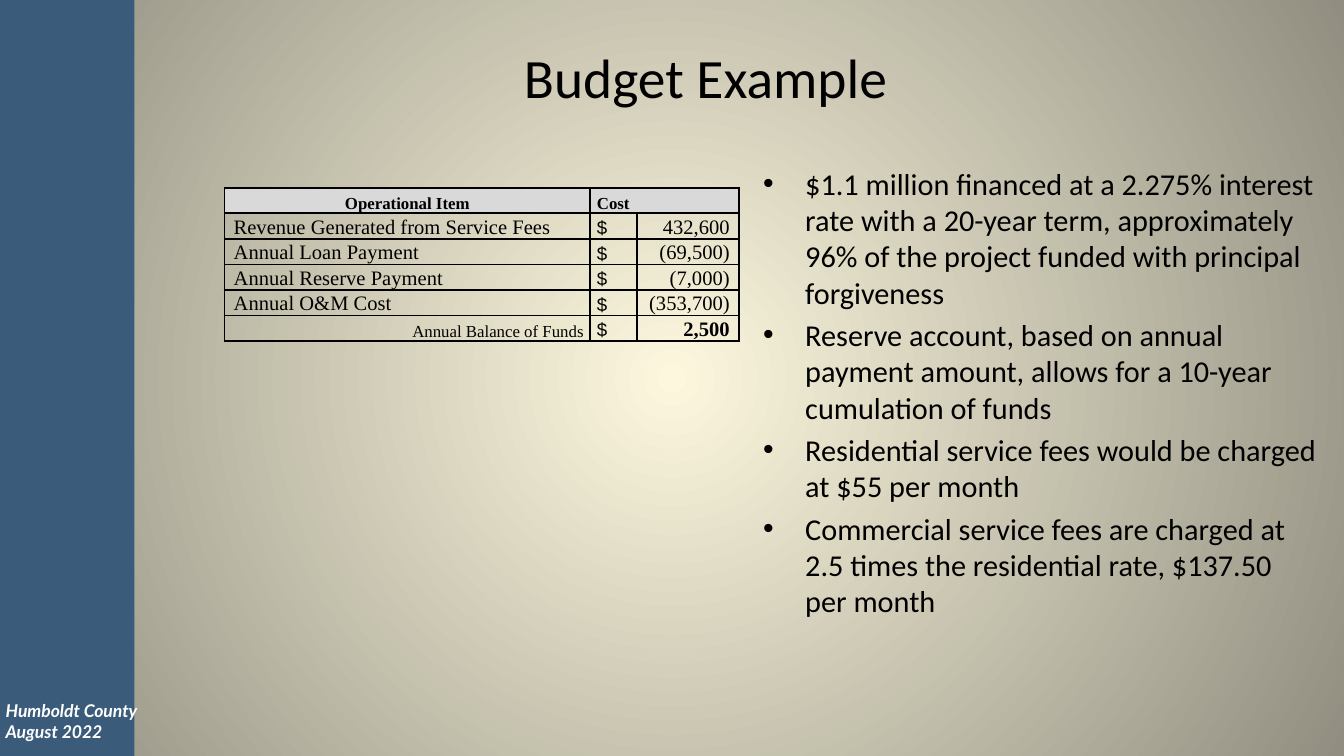
from pptx import Presentation
from pptx.dml.color import RGBColor
from pptx.enum.shapes import MSO_SHAPE
from pptx.enum.text import MSO_ANCHOR, MSO_AUTO_SIZE, PP_ALIGN
from pptx.oxml import parse_xml
from pptx.oxml.ns import nsdecls, qn
from pptx.util import Pt

TITLE = "Budget Example"
FOOTER = ["Humboldt County", "August 2022"]
BULLETS = [
    "$1.1 million financed at a 2.275% interest rate with a 20-year term, "
    "approximately 96% of the project funded with principal forgiveness",
    "Reserve account, based on annual payment amount, allows for a 10-year "
    "cumulation of funds",
    "Residential service fees would be charged at $55 per month",
    "Commercial service fees are charged at 2.5 times the residential rate, "
    "$137.50 per month",
]
HEADER = ("Operational Item", "Cost")
ITEMS = [
    ("Revenue Generated from Service Fees", "432,600"),
    ("Annual Loan Payment", "(69,500)"),
    ("Annual Reserve Payment", "(7,000)"),
    ("Annual O&M Cost", "(353,700)"),
]
BALANCE = ("Annual Balance of Funds", "2,500")

BLACK = "000000"
SERIF = "Times New Roman"
COLUMNS = (196, 25, 54.8)
ROW_HEIGHT = 13.68
NO_STYLE = "{2D5ABB26-0587-4C30-8999-92F81FD0307C}"
LEFT, CENTER, RIGHT = PP_ALIGN.LEFT, PP_ALIGN.CENTER, PP_ALIGN.RIGHT


def rgb(color):
    return RGBColor.from_string(color)


def write(p, text, size, name, color=BLACK, **formats):
    p.text = text
    font = p.runs[0].font
    font.color.rgb = rgb(color)
    for key, value in dict(size=Pt(size), name=name, **formats).items():
        setattr(font, key, value)


def set_frame(tf, left, top, right, bottom, **formats):
    """Set the margins in points, and any other text frame attributes."""
    tf.margin_left, tf.margin_top = Pt(left), Pt(top)
    tf.margin_right, tf.margin_bottom = Pt(right), Pt(bottom)
    for key, value in formats.items():
        setattr(tf, key, value)


def paragraphs(tf, texts):
    for i, text in enumerate(texts):
        yield (tf.add_paragraph() if i else tf.paragraphs[0]), text


def fill_background(s, inner, outer):
    """Radial gradient from the middle of the slide."""
    fill = s.background.fill
    fill.gradient()
    for stop, color, position in zip(fill.gradient_stops, (inner, outer), (0, 1)):
        stop.color.rgb = rgb(color)
        stop.position = position
    grad = s.element.find(".//" + qn("a:gradFill"))
    lin = grad.find(qn("a:lin"))
    grad.replace(lin, parse_xml(
        f'<a:path {nsdecls("a")} path="circle"><a:fillToRect '
        'l="50000" t="50000" r="50000" b="50000"/></a:path>'))


def set_borders(cell, sides):
    tc_pr = cell._tc.get_or_add_tcPr()
    for i, side in enumerate(sides):
        tc_pr.insert(i, parse_xml(
            f'<a:ln{side} {nsdecls("a")} w="{Pt(1)}"><a:solidFill>'
            f'<a:srgbClr val="{BLACK}"/></a:solidFill></a:ln{side}>'))


def set_cell(cell, text, align, margin, size, name=SERIF, bold=False):
    cell.margin_left = cell.margin_right = Pt(margin)
    cell.margin_top = cell.margin_bottom = 0
    cell.vertical_anchor = MSO_ANCHOR.BOTTOM
    p = cell.text_frame.paragraphs[0]
    p.alignment = align
    write(p, text, size, name, bold=bold)


def add_budget(s):
    count = len(ITEMS) + 2
    frame = s.shapes.add_table(count, 3, Pt(120.2), Pt(100.6),
                               Pt(sum(COLUMNS)), Pt(ROW_HEIGHT * count))
    table = frame.table
    table.first_row = table.horz_banding = False
    table._tbl.tblPr.find(qn("a:tableStyleId")).text = NO_STYLE
    for column, width in zip(table.columns, COLUMNS):
        column.width = Pt(width)
    for row in table.rows:
        row.height = Pt(ROW_HEIGHT)

    table.cell(0, 1).merge(table.cell(0, 2))
    for col, (text, align) in enumerate(zip(HEADER, (CENTER, LEFT))):
        set_cell(table.cell(0, col), text, align, 3.6, 9, bold=True)
    for row, (item, cost) in enumerate(ITEMS + [BALANCE], 1):
        last = row == count - 1
        label = (RIGHT, 3.6, 9) if last else (LEFT, 5, 11)
        set_cell(table.cell(row, 0), item, *label)
        set_cell(table.cell(row, 1), "$", LEFT, 3.6, 10, "Arial")
        set_cell(table.cell(row, 2), cost, RIGHT, 5, 11, bold=last)

    for row in range(count):
        for col, sides in enumerate(("LRTB", "LTB", "RTB")):
            cell = table.cell(row, col)
            if row == 0:
                cell.fill.solid()
                cell.fill.fore_color.rgb = rgb("D9D9D9")
                sides = "LRTB"
            else:
                cell.fill.background()
            set_borders(cell, sides)


def add_bullets(s):
    box = s.shapes.add_textbox(Pt(401.8), Pt(75), Pt(311.8), Pt(260))
    tf = box.text_frame
    set_frame(tf, 7.2, 3.6, 7.2, 3.6, word_wrap=True,
              vertical_anchor=MSO_ANCHOR.BOTTOM)
    for p, text in paragraphs(tf, BULLETS):
        p_pr = p._p.get_or_add_pPr()
        p_pr.set("marL", str(Pt(22.5)))
        p_pr.set("indent", str(-Pt(22.5)))
        p_pr.append(parse_xml(f'<a:buFont {nsdecls("a")} typeface="Arial"/>'))
        p_pr.append(parse_xml(f'<a:buChar {nsdecls("a")} char="•"/>'))
        if text != BULLETS[0]:
            p.space_before = Pt(3.24)
        write(p, text, 16.2, "Calibri")


def add_side_band(s):
    band = s.shapes.add_shape(MSO_SHAPE.RECTANGLE, 0, 0, Pt(72), Pt(405))
    band.shadow.inherit = False
    band.fill.solid()
    band.fill.fore_color.rgb = rgb("3A5C7A")
    band.line.fill.background()
    footer = s.shapes.add_textbox(Pt(3), Pt(371.5), Pt(80.6), Pt(25.2))
    set_frame(footer.text_frame, 0, 3.6, 7.2, 3.6, word_wrap=False)
    for p, text in paragraphs(footer.text_frame, FOOTER):
        write(p, text, 9.4, "Lato", "FFFFFF", bold=True, italic=True)


def add_title(s):
    title = s.shapes.title
    title.left, title.top = Pt(72), Pt(7.2)
    title.width, title.height = Pt(612), Pt(67.7)
    set_frame(title.text_frame, 7.2, 3.6, 7.2, 3.6, word_wrap=True,
              auto_size=MSO_AUTO_SIZE.NONE, vertical_anchor=MSO_ANCHOR.MIDDLE)
    p = title.text_frame.paragraphs[0]
    p.alignment = CENTER
    write(p, TITLE, 29.7, "Calibri")


def main():
    prs = Presentation()
    prs.slide_width, prs.slide_height = Pt(720), Pt(405)
    s = prs.slides.add_slide(prs.slide_layouts[5])
    fill_background(s, "FCF7DD", "918E81")
    add_side_band(s)
    add_title(s)
    add_budget(s)
    add_bullets(s)
    prs.save("out.pptx")


if __name__ == "__main__":
    main()
